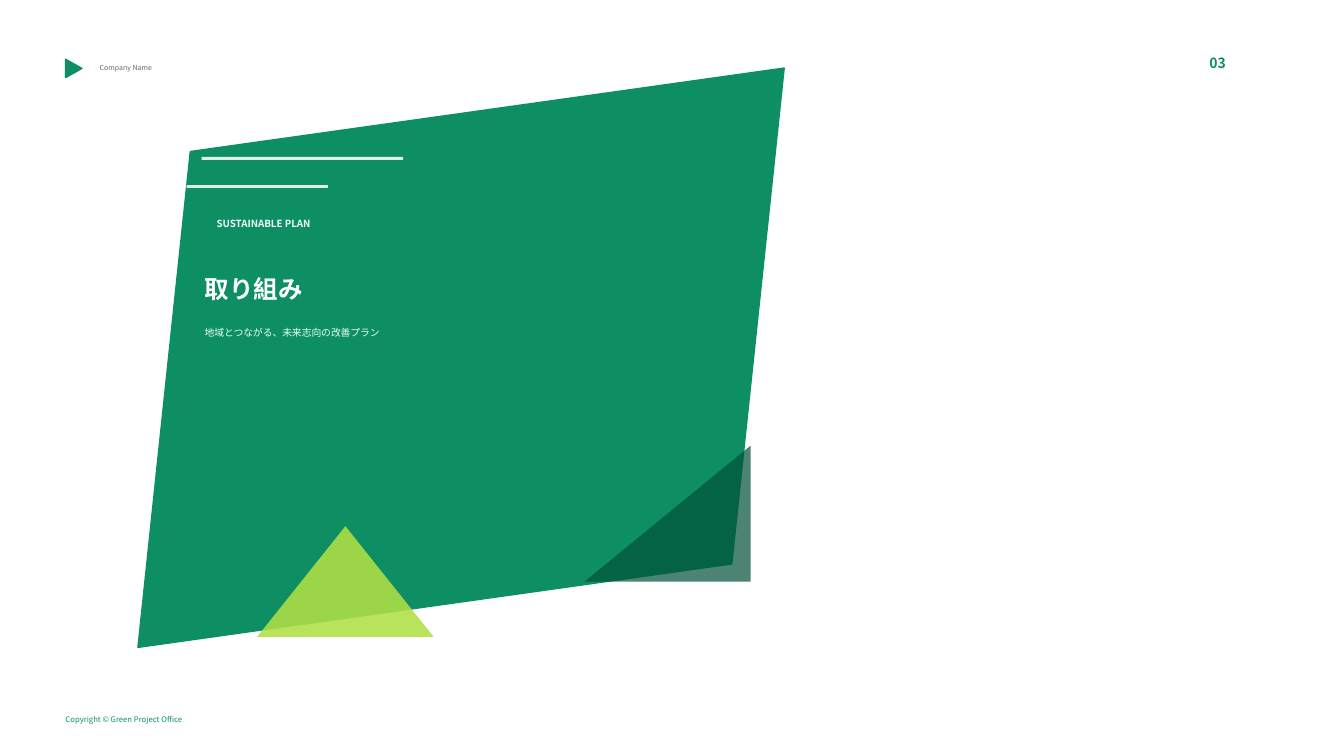
"""Build the green section slide with slanted panel, triangles and title."""
from lxml import etree
from pptx import Presentation
from pptx.dml.color import RGBColor
from pptx.enum.shapes import MSO_CONNECTOR, MSO_SHAPE
from pptx.enum.text import MSO_ANCHOR
from pptx.oxml.ns import qn
from pptx.util import Cm, Pt

SLANT = MSO_SHAPE.PARALLELOGRAM
TRIANGLE = MSO_SHAPE.ISOSCELES_TRIANGLE
CORNER = MSO_SHAPE.RIGHT_TRIANGLE
STRAIGHT = MSO_CONNECTOR.STRAIGHT
MIDDLE = MSO_ANCHOR.MIDDLE
FONT = "Noto Sans CJK JP"
GREEN = "0E8F63"


def paint(fill, color, opacity=100):
    fill.solid()
    fill.fore_color.rgb = RGBColor.from_string(color)
    if opacity < 100:
        solid = fill._xPr.find(qn("a:solidFill"))
        etree.SubElement(solid[0], qn("a:alpha")).set("val", str(opacity * 1000))


deck = Presentation()
deck.slide_width, deck.slide_height = Cm(33.87), Cm(19.05)
page = deck.slides.add_slide(deck.slide_layouts[6])

shapes = [
    (SLANT, (2.54, 2.92, 18.16, 12.19), GREEN, 100, 352, False),
    (TRIANGLE, (6.48, 13.26, 4.45, 2.79), "B0E045", 88, 0, False),
    (CORNER, (14.73, 11.23, 4.19, 3.43), "004F39", 70, 0, True),
    (TRIANGLE, (1.63, 1.52, 0.46, 0.41), GREEN, 100, 90, False),
]
for kind, place, color, opacity, rotation, flipped in shapes:
    shape = page.shapes.add_shape(kind, *map(Cm, place))
    shape.shadow.inherit = False
    shape.rotation = rotation
    paint(shape.fill, color, opacity)
    if opacity == 100:
        paint(shape.line.fill, color)
        shape.line.width = Pt(1)
    else:
        shape.line.fill.background()
    if flipped:
        shape._element.spPr.find(qn("a:xfrm")).set("flipH", "1")

for left, right, height in [(5.08, 10.16, 3.99), (4.7, 8.26, 4.7)]:
    line = page.shapes.add_connector(
        STRAIGHT, Cm(left), Cm(height), Cm(right), Cm(height))
    line.line.width = Pt(2)
    paint(line.line.fill, "FFFFFF", 85)
    etree.SubElement(line._element.spPr, qn("a:effectLst"))

texts = [
    ("Company Name", (2.26, 1.47, 3.56, 0.46), 5, "666666", False, True),
    ("SUSTAINABLE PLAN", (5.21, 5.38, 7.62, 0.51), 7, "EFFFF8", True, True),
    ("取り組み", (5.16, 6.71, 12.95, 1.14), 17.5, "FFFFFF", True, False),
    ("地域とつながる、未来志向の改善プラン", (5.16, 8.1, 12.95, 0.56), 7, "E6FFF5", False, False),
    ("Copyright © Green Project Office", (1.4, 17.91, 8.13, 0.46), 5.5, GREEN, False, True),
    ("03", (30.23, 1.14, 1.52, 0.89), 10, GREEN, True, True),
]
for words, place, size, color, bold, padded in texts:
    box = page.shapes.add_textbox(*map(Cm, place))
    frame = box.text_frame
    frame.word_wrap = True
    frame.vertical_anchor = MIDDLE
    if not padded:
        for side in ("left", "right", "top", "bottom"):
            setattr(frame, f"margin_{side}", 0)
    span = frame.paragraphs[0].add_run()
    span.text = words
    for name, value in {"name": FONT, "size": Pt(size), "bold": bold}.items():
        setattr(span.font, name, value)
    span.font.color.rgb = RGBColor.from_string(color)
    etree.SubElement(span._r.get_or_add_rPr(), qn("a:ea")).set("typeface", FONT)

deck.save("out.pptx")
